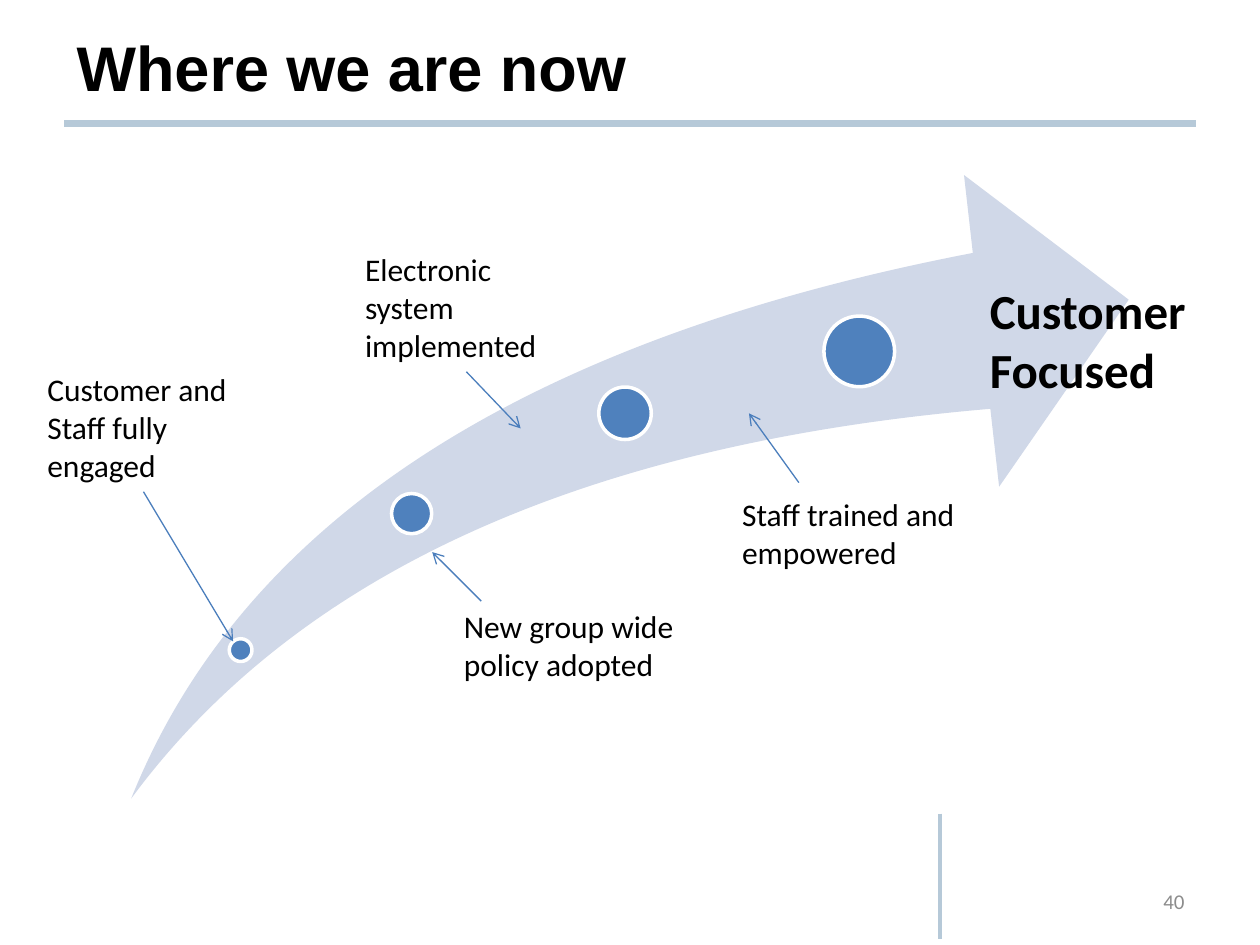
from dataclasses import dataclass

import pptx
import pptx.dml.color
import pptx.enum.shapes
import pptx.enum.text
import pptx.oxml
import pptx.oxml.ns
import pptx.util

Pt = pptx.util.Pt
Shape = pptx.enum.shapes.MSO_SHAPE
Align = pptx.enum.text.PP_ALIGN
Anchor = pptx.enum.text.MSO_ANCHOR


@dataclass(frozen=True)
class Theme:
    title_font: str = "Arial"
    body_font: str = "Calibri"
    title_size: float = 36
    goal_size: float = 28
    label_size: float = 18
    number_size: float = 12
    text: str = "000000"
    muted: str = "8C8C8C"
    rule: str = "B6C9D8"
    swoosh: str = "D0D8E8"
    milestone: str = "4F81BD"
    pointer: str = "4B7EBC"
    outline: str = "FFFFFF"


def rgb(value):
    return pptx.dml.color.RGBColor.from_string(value)


class SlideBuilder:
    """Draws elements on one slide; all lengths are in points."""

    def __init__(self, slide, theme):
        self.slide = slide
        self.theme = theme

    def text(self, wording, left, top, width, height, size, font=None,
             color=None, bold=False, align=Align.LEFT, anchor=Anchor.TOP):
        shape = self.slide.shapes.add_textbox(
            Pt(left), Pt(top), Pt(width), Pt(height))
        frame = shape.text_frame
        frame.word_wrap = True
        frame.vertical_anchor = anchor
        frame.text = wording
        paragraph = frame.paragraphs[0]
        paragraph.alignment = align
        for run in paragraph.runs:
            run.font.name = font or self.theme.body_font
            run.font.size = Pt(size)
            run.font.bold = bold
            run.font.color.rgb = rgb(color or self.theme.text)

    def line(self, start, end, color, weight, arrow=False):
        connector = self.slide.shapes.add_connector(
            pptx.enum.shapes.MSO_CONNECTOR.STRAIGHT,
            *(Pt(value) for value in (*start, *end)))
        connector.line.color.rgb = rgb(color)
        connector.line.width = Pt(weight)
        if arrow:
            namespace = pptx.oxml.ns.nsdecls("a")
            connector.line._get_or_add_ln().append(
                pptx.oxml.parse_xml(f'<a:tailEnd {namespace} type="arrow"/>'))
        properties = connector._element.spPr
        properties.append(properties.makeelement(
            pptx.oxml.ns.qn("a:effectLst"), {}))

    def shape(self, kind, left, top, width, height, fill, outline=None):
        shape = self.slide.shapes.add_shape(
            kind, Pt(left), Pt(top), Pt(width), Pt(height))
        shape.shadow.inherit = False
        shape.fill.solid()
        shape.fill.fore_color.rgb = rgb(fill)
        if outline:
            shape.line.color.rgb = rgb(outline)
            shape.line.width = Pt(2)
        else:
            shape.line.fill.background()
        return shape

    def swoosh(self, left, top, width, height):
        arrow = self.shape(Shape.SWOOSH_ARROW, left, top, width, height,
                           self.theme.swoosh)
        arrow.adjustments[0] = 0.25
        arrow.adjustments[1] = 0.25

    def milestone(self, center_x, center_y, diameter):
        self.shape(Shape.OVAL, center_x - diameter / 2,
                   center_y - diameter / 2, diameter, diameter,
                   self.theme.milestone, self.theme.outline)

    def callout(self, wording, box, start, end):
        """A label with an arrow pointing at the swoosh."""
        self.text(wording, *box, self.theme.label_size)
        self.line(start, end, self.theme.pointer, 0.75, arrow=True)


MILESTONES = [  # center x, center y, diameter
    (137.5, 371.5, 13),
    (235.2, 293.5, 23),
    (357.2, 236.2, 30),
    (491, 200.8, 40.4),
]

CALLOUTS = [  # wording, box, arrow start, arrow end
    ("Customer and Staff fully engaged", (20, 208, 124.5, 72.7),
     (82, 281, ), (133.2, 366.5)),
    ("New group wide policy adopted", (258, 343.5, 175.7, 51),
     (275, 343.5), (247, 315.5)),
    ("Electronic system implemented", (201.5, 139.5, 130.3, 72.7),
     (266.5, 212.4), (297.5, 244.8)),
    ("Staff trained and empowered", (417, 279.5, 175.7, 51),
     (456.5, 275.8), (428, 236.2)),
]


def main():
    presentation = pptx.Presentation()
    presentation.slide_width = Pt(720)
    presentation.slide_height = Pt(540)
    theme = Theme()
    slide = presentation.slides.add_slide(presentation.slide_layouts[6])
    builder = SlideBuilder(slide, theme)

    builder.line((36.7, 70.6), (683.3, 70.6), theme.rule, 4)
    builder.line((537, 465), (537, 536.5), theme.rule, 2)
    builder.text("Where we are now", 36.7, 10, 647.3, 55.5, theme.title_size,
                 font=theme.title_font, bold=True, anchor=Anchor.MIDDLE)
    builder.text("40", 516, 500.5, 168, 28.8, theme.number_size,
                 color=theme.muted, align=Align.RIGHT, anchor=Anchor.MIDDLE)

    builder.swoosh(75, 100, 570, 356.3)
    for milestone in MILESTONES:
        builder.milestone(*milestone)
    for callout in CALLOUTS:
        builder.callout(*callout)
    builder.text("Customer Focused", 558.5, 157, 147.6, 75, theme.goal_size,
                 bold=True)

    presentation.save("out.pptx")


if __name__ == "__main__":
    main()
